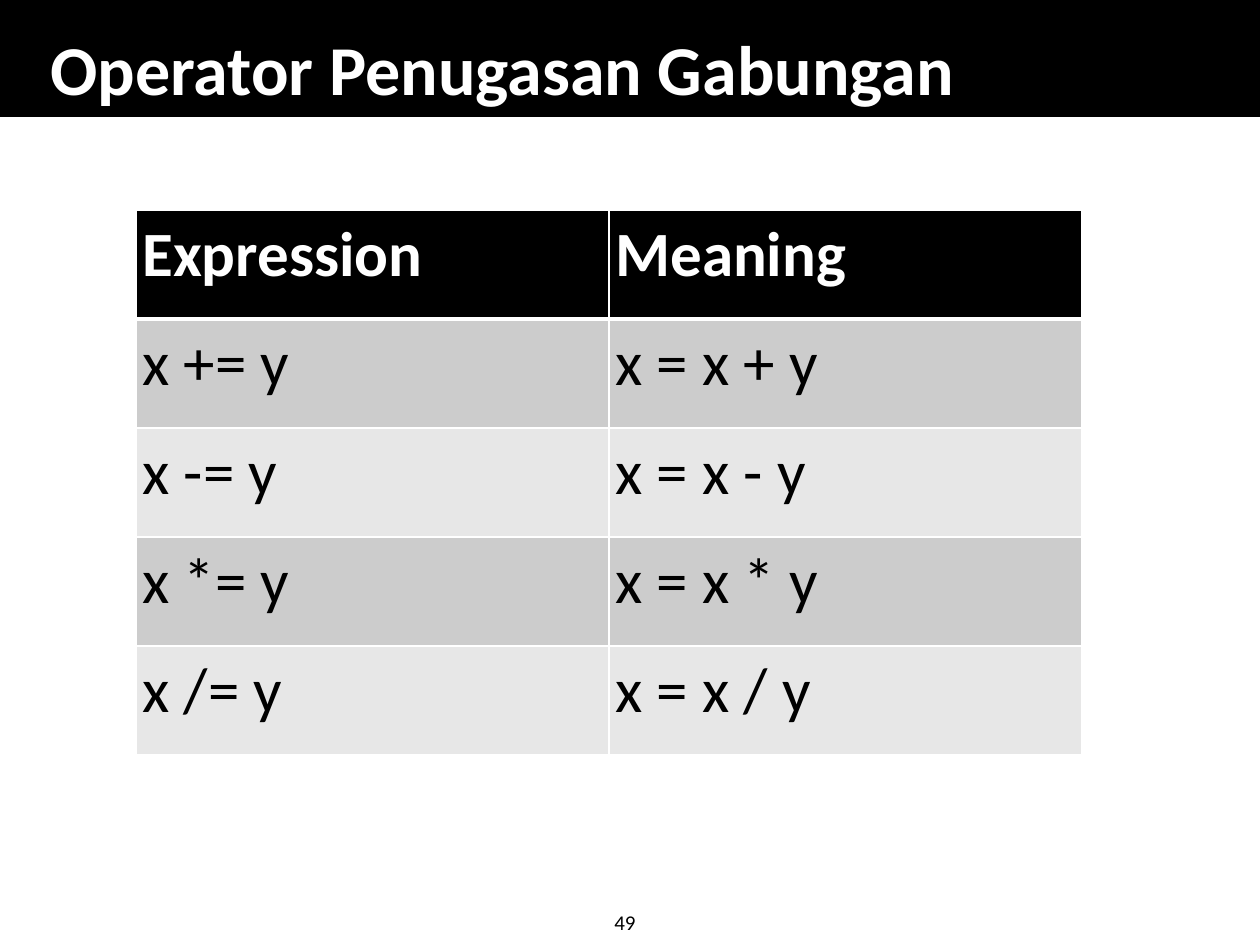
import dataclasses

import lxml.etree
import pptx
import pptx.dml.color
import pptx.enum.shapes
import pptx.enum.text
import pptx.oxml.ns
import pptx.util

PX = 914400 / 126

ROWS = [
    ("Expression", "Meaning"),
    ("x += y", "x = x + y"),
    ("x -= y", "x = x - y"),
    ("x *= y", "x = x * y"),
    ("x /= y", "x = x / y"),
]


@dataclasses.dataclass(frozen=True)
class Theme:
    font: str = "Calibri"
    dark: str = "000000"
    light: str = "FFFFFF"
    bands: tuple = ("CCCCCC", "E7E7E7")
    title_size: int = 40
    table_size: int = 36
    number_size: int = 12
    rule: int = 1
    header_rule: int = 3


THEME = Theme()


def px(n):
    return pptx.util.Emu(round(n * PX))


def rgb(value):
    return pptx.dml.color.RGBColor.from_string(value)


def add_text(tf, text, size, color, bold=False):
    p = tf.paragraphs[0]
    p.alignment = pptx.enum.text.PP_ALIGN.LEFT
    r = p.add_run()
    r.text = text
    r.font.name = THEME.font
    r.font.size = pptx.util.Pt(size)
    r.font.bold = bold
    r.font.color.rgb = rgb(color)


def add_band(s, height):
    band = s.shapes.add_shape(
        pptx.enum.shapes.MSO_SHAPE.RECTANGLE, 0, 0, px(1260), px(height))
    band.shadow.inherit = False
    band.fill.solid()
    band.fill.fore_color.rgb = rgb(THEME.dark)
    band.line.color.rgb = rgb(THEME.dark)
    band.line.width = pptx.util.Pt(1)


def place_title(s, text, left, top, width, height):
    title = s.shapes.title
    title.left, title.top = px(left), px(top)
    title.width, title.height = px(width), px(height)
    tf = title.text_frame
    tf.auto_size = pptx.enum.text.MSO_AUTO_SIZE.NONE
    tf.vertical_anchor = pptx.enum.text.MSO_ANCHOR.BOTTOM
    add_text(tf, text, THEME.title_size, THEME.light, bold=True)
    # Bring the title in front of the band
    s.shapes._spTree.append(title._element)


def add_number(s, text, left, top, width, height):
    box = s.shapes.add_textbox(px(left), px(top), px(width), px(height))
    tf = box.text_frame
    tf.word_wrap = False
    tf.auto_size = pptx.enum.text.MSO_AUTO_SIZE.SHAPE_TO_FIT_TEXT
    add_text(tf, text, THEME.number_size, THEME.dark)


def set_borders(cell, top, bottom):
    qn = pptx.oxml.ns.qn
    tc_pr = cell._tc.get_or_add_tcPr()
    widths = {"L": THEME.rule, "R": THEME.rule, "T": top, "B": bottom}
    for side, width in widths.items():
        ln = lxml.etree.SubElement(
            tc_pr, qn(f"a:ln{side}"), w=str(pptx.util.Pt(width)))
        fill = lxml.etree.SubElement(ln, qn("a:solidFill"))
        lxml.etree.SubElement(fill, qn("a:srgbClr"), val=THEME.light)


def style_cell(cell, text, row):
    header = row == 0
    set_borders(cell,
                top=THEME.header_rule if row == 1 else THEME.rule,
                bottom=THEME.header_rule if header else THEME.rule)
    cell.fill.solid()
    cell.fill.fore_color.rgb = rgb(
        THEME.dark if header else THEME.bands[(row - 1) % 2])
    cell.margin_left = cell.margin_right = pptx.util.Inches(0.05)
    cell.margin_top = cell.margin_bottom = pptx.util.Inches(0.05)
    add_text(cell.text_frame, text, THEME.table_size,
             THEME.light if header else THEME.dark, bold=header)


def add_operator_table(s, rows, left, top, col_width, row_height):
    n_rows, n_cols = len(rows), len(rows[0])
    table = s.shapes.add_table(
        n_rows, n_cols, px(left), px(top),
        px(col_width * n_cols), px(row_height * n_rows)).table
    for column in table.columns:
        column.width = px(col_width)
    for i, texts in enumerate(rows):
        table.rows[i].height = px(row_height)
        for j, text in enumerate(texts):
            style_cell(table.cell(i, j), text, i)


def main():
    prs = pptx.Presentation()
    prs.slide_width, prs.slide_height = px(1260), px(945)
    s = prs.slides.add_slide(prs.slide_layouts[5])

    # Header band, page number and title
    add_band(s, 116)
    add_number(s, "49", 602, 903, 52, 38)
    place_title(s, "Operator Penugasan Gabungan", 38, 26, 1179, 90)

    # Compound assignment operators
    add_operator_table(s, ROWS, 136, 210, 473, 109)

    prs.save("out.pptx")


if __name__ == "__main__":
    main()
